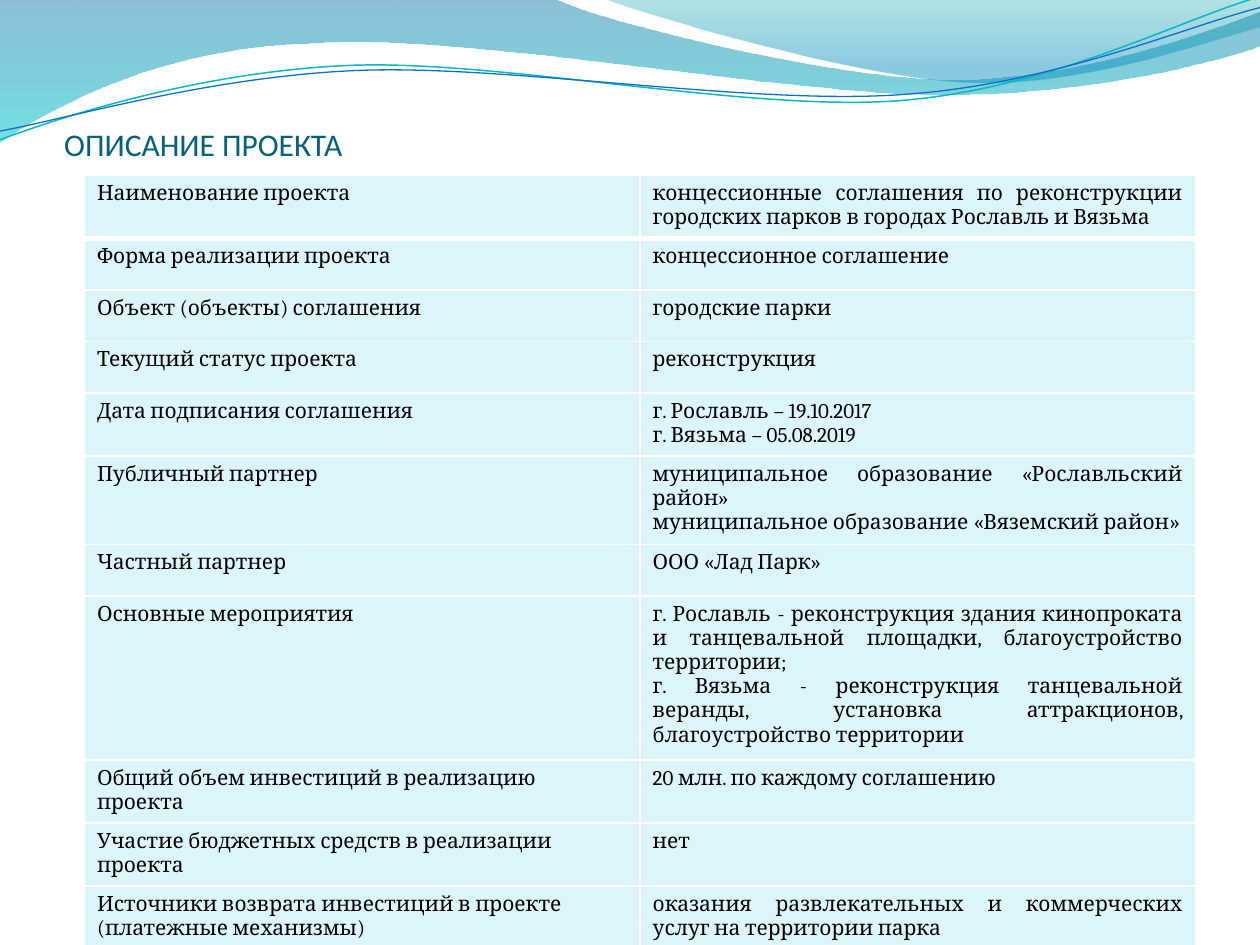
from lxml import etree
from pptx import Presentation
from pptx.dml.color import RGBColor
from pptx.enum.text import MSO_ANCHOR, PP_ALIGN
from pptx.oxml.ns import qn
from pptx.util import Inches, Pt

JUSTIFY, LEFT, BOTTOM = PP_ALIGN.JUSTIFY, PP_ALIGN.LEFT, MSO_ANCHOR.BOTTOM

TITLE_COLOR = RGBColor(0x04, 0x61, 0x7B)
TEXT_COLOR = RGBColor(0, 0, 0)
CELL_COLOR = RGBColor(0xDB, 0xF5, 0xF9)
BORDER_COLOR = RGBColor(0xFF, 0xFF, 0xFF)
TEAL_LINE = RGBColor(0x0A, 0xB8, 0xBF)
BLUE_LINE = RGBColor(0x0F, 0x6F, 0xC6)
DEEP_BLUE = RGBColor(0x00, 0x74, 0xA1)
AQUA = RGBColor(0x00, 0xC6, 0xCF)
TEAL = RGBColor(0x00, 0xA1, 0xA9)
SKY_BLUE = RGBColor(0x00, 0x8B, 0xBF)

TITLE = "ОПИСАНИЕ ПРОЕКТА"
ROWS = [
    ("Наименование проекта",
     "концессионные соглашения по реконструкции городских парков в городах Рославль и Вязьма"),
    ("Форма реализации проекта", "концессионное соглашение"),
    ("Объект (объекты) соглашения", "городские парки"),
    ("Текущий статус проекта", "реконструкция"),
    ("Дата подписания соглашения", "г. Рославль – 19.10.2017\nг. Вязьма – 05.08.2019"),
    ("Публичный партнер",
     "муниципальное образование «Рославльский район»\n"
     "муниципальное образование «Вяземский район»"),
    ("Частный партнер", "ООО «Лад Парк»"),
    ("Основные мероприятия",
     "г. Рославль - реконструкция здания кинопроката и танцевальной площадки, "
     "благоустройство территории;\n"
     "г. Вязьма - реконструкция танцевальной веранды, установка аттракционов, "
     "благоустройство территории"),
    ("Общий объем инвестиций в реализацию проекта", "20 млн. по каждому соглашению"),
    ("Участие бюджетных средств в реализации проекта", "нет"),
    ("Источники возврата инвестиций в проекте (платежные механизмы)",
     "оказания развлекательных и коммерческих услуг на территории парка"),
]

# Outlines in inches: two numbers are a straight step, six a Bezier curve.
# Gradient stops are (position, colour, opacity in percent).
WAVES = [
    ([(0, 0), (4.4, -0.01), (4.76, 0.17, 6.64, 0.63, 7.58, 0.63),
      (8.53, 0.63, 9.58, 0.26, 10, 0.09), (10.01, 0.36),
      (9.83, 0.44, 8.7, 0.76, 7.46, 0.75), (6.22, 0.75, 3.82, 0.28, 2.57, 0.34),
      (1.29, 0.36, 0.46, 0.83, -0.01, 1.13)],
     [(0, DEEP_BLUE, 45), (1, AQUA, 55)]),
    ([(4.79, -0.01), (5.09, 0.11, 6.82, 0.62, 7.69, 0.65),
      (8.56, 0.69, 9.61, 0.32, 10, 0.21), (10, 0)],
     [(0, TEAL, 30), (0.8, SKY_BLUE, 45)]),
]
WAVE_LINES = [
    ([(0, 1.11), (0.48, 0.93, 1.58, 0.57, 2.77, 0.52),
      (3.95, 0.47, 5.93, 0.89, 7.13, 0.8), (8.33, 0.71, 9.38, 0.15, 9.98, -0.02)],
     TEAL_LINE, 0.85),
    ([(0, 1.04), (0.47, 0.96, 1.64, 0.61, 2.83, 0.56),
      (4.03, 0.51, 5.97, 0.84, 7.17, 0.75), (8.36, 0.67, 9.41, 0.21, 10, 0.06)],
     BLUE_LINE, 0.75),
]


def add_outline(slide, outline, close):
    """Draw straight steps through the end points, then bend the curved ones."""
    ends = [(Inches(step[-2]), Inches(step[-1])) for step in outline]
    builder = slide.shapes.build_freeform(*ends[0])
    builder.add_line_segments(ends[1:], close=close)
    shape = builder.convert_to_shape()
    shape.shadow.inherit = False
    segments = list(shape.element.spPr.iter(qn("a:lnTo")))
    for segment, step in zip(segments, outline[1:]):
        if len(step) == 2:
            continue
        curve = etree.Element(qn("a:cubicBezTo"))
        for x, y in zip(step[::2], step[1::2]):
            etree.SubElement(curve, qn("a:pt"), x=str(Inches(x) - shape.left),
                             y=str(Inches(y) - shape.top))
        segment.getparent().replace(segment, curve)
    return shape


def add_wave(slide, outline, stops):
    shape = add_outline(slide, outline, True)
    shape.line.fill.background()
    shape.fill.gradient()
    shape.fill.gradient_angle = 270
    for stop, (position, color, _) in zip(shape.fill.gradient_stops, stops):
        stop.position = position
        stop.color.rgb = color
    color_elements = shape.element.spPr.findall(".//" + qn("a:srgbClr"))
    for element, (_, _, opacity) in zip(color_elements, stops):
        etree.SubElement(element, qn("a:alpha"), val=str(opacity * 1000))


def add_wave_line(slide, outline, color, width):
    shape = add_outline(slide, outline, False)
    shape.fill.background()
    shape.line.color.rgb = color
    shape.line.width = Pt(width)


def write(text_frame, text, font_name, size, color, alignment):
    text_frame.text = text
    for paragraph in text_frame.paragraphs:
        paragraph.alignment = alignment
        for run in paragraph.runs:
            run.font.name = font_name
            run.font.size = Pt(size)
            run.font.bold = False
            run.font.color.rgb = color


def set_borders(cell, widths):
    properties = cell._tc.get_or_add_tcPr()
    for side, width in widths.items():
        line = etree.SubElement(properties, qn("a:ln" + side), w=str(Pt(width)))
        fill = etree.SubElement(line, qn("a:solidFill"))
        etree.SubElement(fill, qn("a:srgbClr"), val=str(BORDER_COLOR))


def add_title(slide):
    box = slide.shapes.add_textbox(Inches(0.51), Inches(0.75), Inches(2.77), Inches(0.54))
    frame = box.text_frame
    frame.word_wrap = True
    frame.vertical_anchor = BOTTOM
    frame.margin_left = frame.margin_right = frame.margin_bottom = 0
    write(frame, TITLE, "Calibri", 18, TITLE_COLOR, LEFT)


def add_project_table(slide):
    height = Inches(5.33)
    graphic_frame = slide.shapes.add_table(len(ROWS), 2, Inches(0.67), Inches(1.39),
                                           Inches(8.82), height)
    table = graphic_frame.table
    table.first_row = table.horz_banding = False
    for row_index, texts in enumerate(ROWS):
        table.rows[row_index].height = Inches(0.41)
        widths = {"L": 1, "R": 1, "T": 3 if row_index == 1 else 1,
                  "B": 3 if row_index == 0 else 1}
        for column, (text, alignment) in enumerate(zip(texts, (LEFT, JUSTIFY))):
            cell = table.cell(row_index, column)
            set_borders(cell, widths)
            cell.fill.solid()
            cell.fill.fore_color.rgb = CELL_COLOR
            write(cell.text_frame, text, "Cambria", 12, TEXT_COLOR, alignment)
    graphic_frame.height = height


def main():
    presentation = Presentation()
    presentation.slide_width, presentation.slide_height = Inches(10), Inches(7.5)
    slide = presentation.slides.add_slide(presentation.slide_layouts[6])
    for wave in WAVES:
        add_wave(slide, *wave)
    for wave_line in WAVE_LINES:
        add_wave_line(slide, *wave_line)
    add_title(slide)
    add_project_table(slide)
    presentation.save("out.pptx")


if __name__ == "__main__":
    main()
